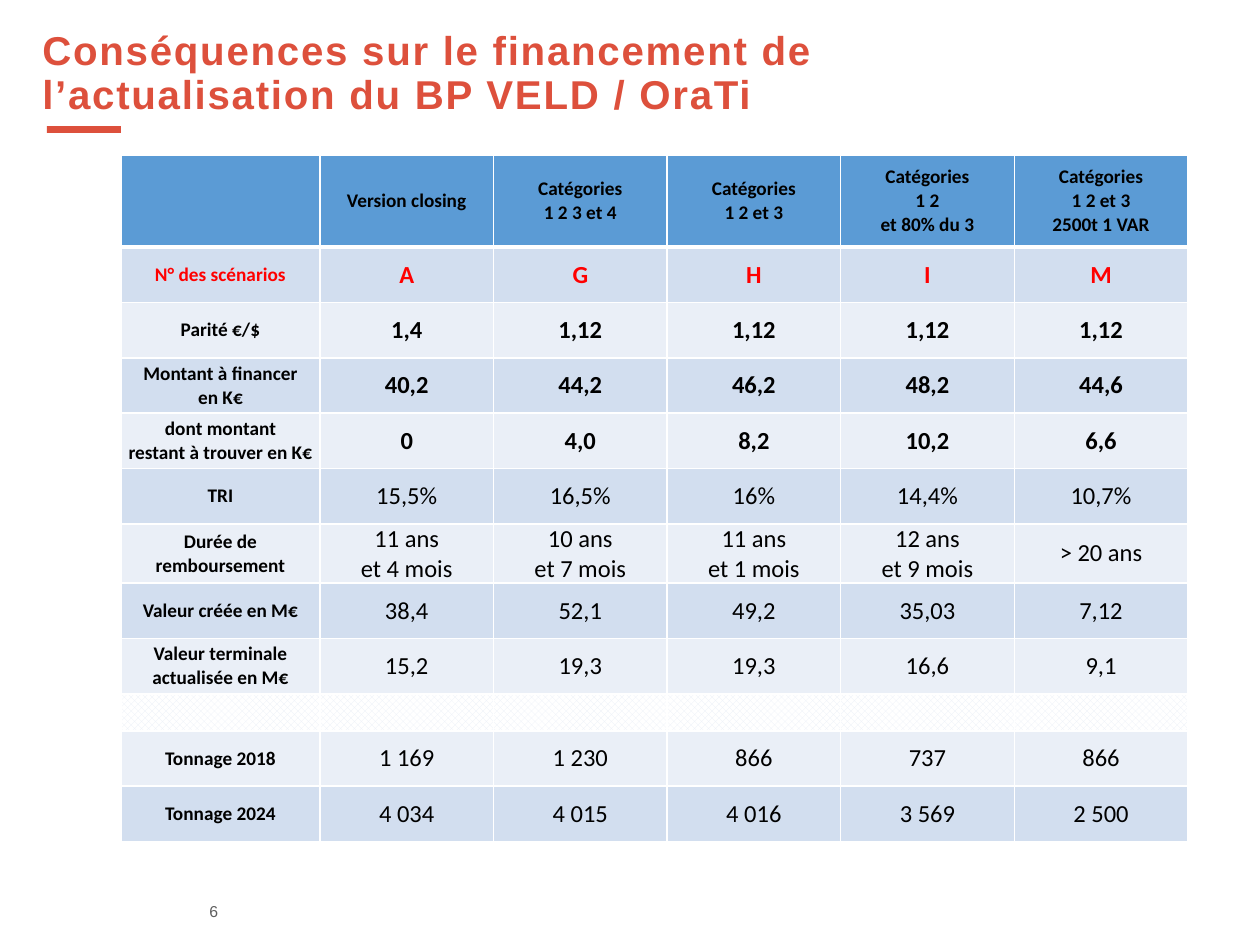
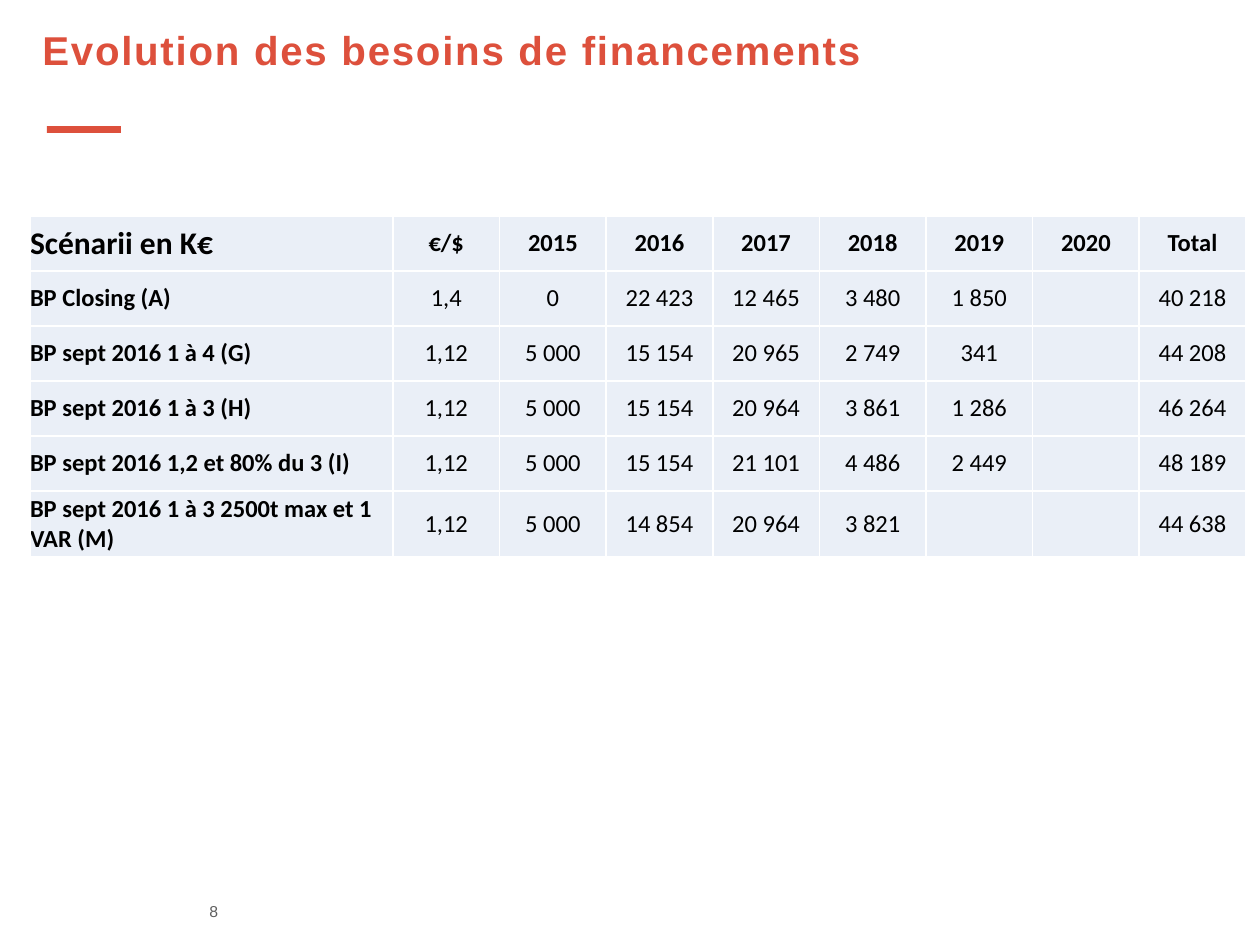
from lxml.etree import SubElement
from pptx import Presentation
from pptx.dml.color import RGBColor
from pptx.enum.dml import MSO_PATTERN
from pptx.enum.shapes import MSO_SHAPE
from pptx.enum.text import MSO_ANCHOR, PP_ALIGN
from pptx.oxml.ns import qn
from pptx.util import Emu, Pt

PX = 914400 / 126

CORAL = RGBColor(0xDD, 0x50, 0x3C)
GREY = RGBColor(0x5F, 0x5F, 0x5F)
BLUE = RGBColor(0x5B, 0x9B, 0xD5)
MID_BLUE = RGBColor(0xD2, 0xDE, 0xEF)
PALE_BLUE = RGBColor(0xEA, 0xEF, 0xF7)
RED = RGBColor(0xFF, 0x00, 0x00)
BLACK = RGBColor(0x00, 0x00, 0x00)
WHITE = RGBColor(0xFF, 0xFF, 0xFF)

TITLE_BOX = (30, 25, 1009, 91)
ACCENT_BOX = (47, 126, 74, 7)
PAGE_BOX = (197, 900, 47, 23)
SCENARIO_BOX = (121, 155, 1067, 687)
NEEDS_BOX = (30, 216, 1216, 341)

SCENARIO_ROWS = [
    ["", "Version closing", "Catégories\n1 2 3 et 4", "Catégories\n1 2 et 3",
     "Catégories\n1 2\net 80% du 3", "Catégories\n1 2 et 3\n2500t 1 VAR"],
    ["N° des scénarios", "A", "G", "H", "I", "M"],
    ["Parité €/$", "1,4", "1,12", "1,12", "1,12", "1,12"],
    ["Montant à financer\nen K€", "40,2", "44,2", "46,2", "48,2", "44,6"],
    ["dont montant\nrestant à trouver en K€", "0", "4,0", "8,2", "10,2", "6,6"],
    ["TRI", "15,5%", "16,5%", "16%", "14,4%", "10,7%"],
    ["Durée de remboursement", "11 ans\net 4 mois", "10 ans\net 7 mois",
     "11 ans\net 1 mois", "12 ans\net 9 mois", "> 20 ans"],
    ["Valeur créée en M€", "38,4", "52,1", "49,2", "35,03", "7,12"],
    ["Valeur terminale actualisée en M€", "15,2", "19,3", "19,3", "16,6", "9,1"],
    [""] * 6,
    ["Tonnage 2018", "1 169", "1 230", "866", "737", "866"],
    ["Tonnage 2024", "4 034", "4 015", "4 016", "3 569", "2 500"],
]
HEADER_ROW, SCENARIO_ROW, LAST_BOLD_ROW, DURATION_ROW, SPACER_ROW = 0, 1, 4, 6, 9

NEEDS_ROWS = [
    ["Scénarii en K€", "€/$", "2015", "2016", "2017", "2018", "2019", "2020", "Total"],
    ["BP Closing (A)", "1,4", "0", "22 423", "12 465", "3 480", "1 850", "", "40 218"],
    ["BP sept 2016 1 à 4 (G)", "1,12", "5 000", "15 154", "20 965", "2 749", "341", "",
     "44 208"],
    ["BP sept 2016 1 à 3 (H)", "1,12", "5 000", "15 154", "20 964", "3 861", "1 286", "",
     "46 264"],
    ["BP sept 2016 1,2 et 80% du 3 (I)", "1,12", "5 000", "15 154", "21 101", "4 486",
     "2 449", "", "48 189"],
    ["BP sept 2016 1 à 3 2500t max et 1 VAR (M)", "1,12", "5 000", "14 854", "20 964",
     "3 821", "", "", "44 638"],
]


def px(length):
    """Turn px into EMU."""
    return Emu(round(length * PX))


def style(paragraph, font_name, size, color, bold=False):
    """Set the font of a whole paragraph."""
    font = paragraph.font
    font.name, font.size, font.bold = font_name, Pt(size), bold
    font.color.rgb = color


def add_text(slide, box, text, size, color, bold=False, anchor=MSO_ANCHOR.TOP):
    """Add one wrapped Arial paragraph and return it."""
    frame = slide.shapes.add_textbox(*map(px, box)).text_frame
    frame.word_wrap = True
    frame.vertical_anchor = anchor
    paragraph = frame.paragraphs[0]
    paragraph.text = text
    style(paragraph, "Arial", size, color, bold)
    return paragraph


def add_frame(slide, title, page):
    """Place the title, its accent bar and the page number."""
    add_text(slide, PAGE_BOX, page, 9, GREY, anchor=MSO_ANCHOR.MIDDLE)
    heading = add_text(slide, TITLE_BOX, title, 23, CORAL, bold=True)
    heading.line_spacing = 0.9
    heading.runs[0]._r.get_or_add_rPr().set("spc", "100")
    accent = slide.shapes.add_shape(MSO_SHAPE.RECTANGLE, *map(px, ACCENT_BOX))
    accent.shadow.inherit = False
    accent.fill.solid()
    accent.fill.fore_color.rgb = CORAL
    accent.line.fill.background()


def spread(total, count, fixed):
    """Share a length evenly between the parts that have no fixed size."""
    regular = (total - sum(fixed.values())) / (count - len(fixed))
    return [fixed.get(index, regular) for index in range(count)]


def add_grid(slide, box, rows, fixed_columns, fixed_rows):
    """Add an unstyled table with evenly shared columns and rows."""
    table = slide.shapes.add_table(len(rows), len(rows[0]), *map(px, box)).table
    table.first_row = table.horz_banding = False
    for column, width in zip(table.columns, spread(box[2], len(rows[0]), fixed_columns)):
        column.width = px(width)
    for row, height in zip(table.rows, spread(box[3], len(rows), fixed_rows)):
        row.height = px(height)
    return table


def add_borders(cell, top=1, bottom=1):
    """Draw white borders with widths in points."""
    properties = cell._tc.get_or_add_tcPr()
    for side, width in (("L", 1), ("R", 1), ("T", top), ("B", bottom)):
        border = SubElement(properties, qn(f"a:ln{side}"), w=str(Pt(width)))
        solid = SubElement(border, qn("a:solidFill"))
        SubElement(solid, qn("a:srgbClr"), val=str(WHITE))


def fill_cell(cell, text, fill, size, bold, color=BLACK, align=PP_ALIGN.CENTER):
    """Write and colour one table cell without margins."""
    cell.margin_left = cell.margin_right = cell.margin_top = cell.margin_bottom = 0
    cell.vertical_anchor = MSO_ANCHOR.MIDDLE
    cell.fill.solid()
    cell.fill.fore_color.rgb = fill
    cell.text = text
    for paragraph in cell.text_frame.paragraphs:
        paragraph.alignment = align
        style(paragraph, "Calibri", size, color, bold)


def add_scenario_table(slide, box):
    """Compare the financing scenarios column by column."""
    fixed_rows = {HEADER_ROW: 92, DURATION_ROW: 59, SPACER_ROW: 37}
    table = add_grid(slide, box, SCENARIO_ROWS, {0: 199}, fixed_rows)
    for r, row in enumerate(SCENARIO_ROWS):
        fill = BLUE if r == HEADER_ROW else MID_BLUE if r % 2 else PALE_BLUE
        color = RED if r == SCENARIO_ROW else BLACK
        for c, text in enumerate(row):
            cell = table.cell(r, c)
            add_borders(cell, top=3 if r == SCENARIO_ROW else 1,
                        bottom=3 if r == HEADER_ROW else 1)
            small = c == 0 or r in (HEADER_ROW, SPACER_ROW)
            fill_cell(cell, text, fill, 11 if small else 14,
                      c == 0 or r <= LAST_BOLD_ROW, color)
            if r == SPACER_ROW:
                cell.fill.patterned()
                cell.fill.pattern = MSO_PATTERN.LARGE_CHECKER_BOARD
                cell.fill.fore_color.rgb = PALE_BLUE
                cell.fill.back_color.rgb = WHITE


def add_needs_table(slide, box):
    """List the yearly financing needs of each scenario."""
    table = add_grid(slide, box, NEEDS_ROWS, {0: 363}, {len(NEEDS_ROWS) - 1: 66})
    for r, row in enumerate(NEEDS_ROWS):
        for c, text in enumerate(row):
            cell = table.cell(r, c)
            add_borders(cell)
            fill_cell(cell, text, PALE_BLUE, 18 if r == c == 0 else 14, r == 0 or c == 0,
                      align=PP_ALIGN.CENTER if c else PP_ALIGN.LEFT)


def main():
    """Build and save both slides."""
    deck = Presentation()
    deck.slide_width, deck.slide_height = px(1260), px(945)
    blank = deck.slide_layouts[6]

    consequences = deck.slides.add_slide(blank)
    add_frame(consequences, "Conséquences sur le financement de "
              "l’actualisation du BP VELD / OraTi", "6")
    add_scenario_table(consequences, SCENARIO_BOX)

    needs = deck.slides.add_slide(blank)
    add_frame(needs, "Evolution des besoins de financements", "8")
    add_needs_table(needs, NEEDS_BOX)

    deck.save("out.pptx")


if __name__ == "__main__":
    main()
